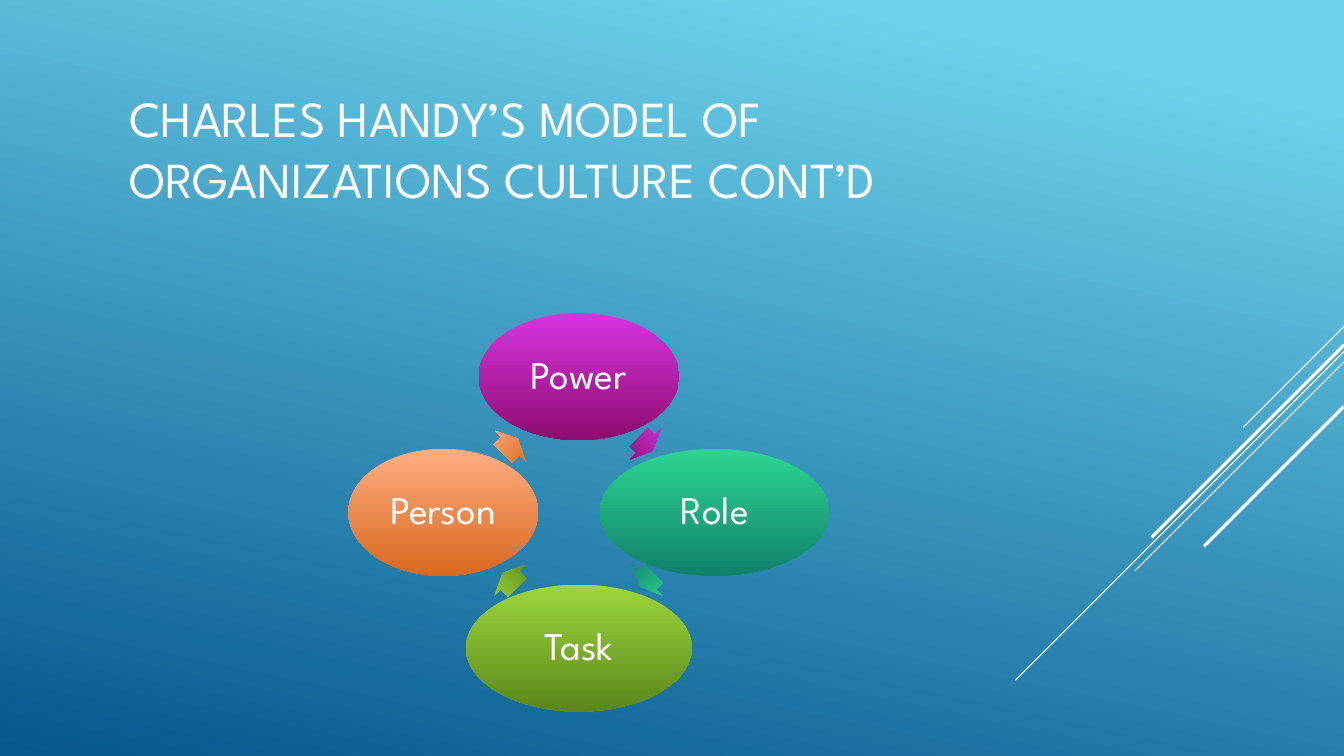
from dataclasses import dataclass
from math import cos, radians, sin

from lxml.etree import SubElement
from pptx import Presentation
from pptx.dml.color import RGBColor
from pptx.dml.fill import FillFormat
from pptx.enum.shapes import MSO_CONNECTOR, MSO_SHAPE
from pptx.enum.text import MSO_ANCHOR as Anchor, MSO_AUTO_SIZE as AutoSize, PP_ALIGN as Align
from pptx.oxml.ns import qn
from pptx.slide import Slide
from pptx.text.text import TextFrame
from pptx.util import Cm, Pt


@dataclass(frozen=True)
class Theme:
    font: str = "League Spartan"
    white: str = "FFFFFF"
    sky: str = "6ED2EB"
    ocean: str = "06588E"
    title_size: float = 36
    label_size: float = 28


@dataclass(frozen=True)
class Ray:
    """A diagonal that falls to the left from the right edge (cm)."""
    top: float
    run: float
    weight: float


@dataclass(frozen=True)
class Culture:
    """An ellipse on the ring and the arrow that follows it (cm)."""
    name: str
    width: float
    light: str
    dark: str
    arrow_x: float
    arrow_y: float
    arrow_width: float


THEME = Theme()
PAGE_WIDTH, PAGE_HEIGHT = 33.87, 19.05
RING_X, RING_Y, RING_RADIUS = 14.59, 12.91, 3.42
ELLIPSE_HEIGHT, ARROW_HEIGHT = 3.2, 1.09

RAYS = [
    Ray(8.23, 2.54, 0.75),
    Ray(8.86, 8.28, 0.75),
    Ray(9.12, 5.27, 0.75),
    Ray(8.69, 4.85, 2.25),
    Ray(10.24, 3.53, 2.25),
]
CULTURES = [
    Culture("Power", 5.05, "D835DF", "8D0C6F", 16.27, 11.19, 0.48),
    Culture("Role", 5.79, "2ED592", "11806A", 16.31, 14.62, 0.46),
    Culture("Task", 5.69, "9DD63D", "5B871B", 12.85, 14.62, 0.51),
    Culture("Person", 4.78, "FFAE82", "D7681F", 12.86, 11.24, 0.53),
]


def color(code: str) -> RGBColor:
    return RGBColor.from_string(code)


def shade(fill: FillFormat, light: str, dark: str, start: float = 0, angle: float = 90) -> None:
    """Fill with two colours; the angle runs clockwise."""
    fill.gradient()
    fill.gradient_angle = 360 - angle
    for stop, code, position in zip(fill.gradient_stops, (light, dark), (start, 1)):
        stop.color.rgb = color(code)
        stop.position = position


def write(frame: TextFrame, words: str, size: float, align: Align) -> None:
    frame.text = words
    frame.word_wrap = True
    frame.auto_size = AutoSize.NONE
    frame.vertical_anchor = Anchor.MIDDLE
    para = frame.paragraphs[0]
    para.alignment = align
    for span in para.runs:
        span.font.name = THEME.font
        span.font.size = Pt(size)
        span.font.color.rgb = color(THEME.white)


def draw_ray(page: Slide, ray: Ray) -> None:
    line = page.shapes.add_connector(
        MSO_CONNECTOR.STRAIGHT, Cm(PAGE_WIDTH), Cm(ray.top),
        Cm(PAGE_WIDTH - ray.run), Cm(ray.top + ray.run))
    line.line.color.rgb = color(THEME.white)
    line.line.width = Pt(ray.weight)
    SubElement(line._element.spPr, qn("a:effectLst"))


def add_body(page: Slide, kind: MSO_SHAPE, x: float, y: float,
             width: float, height: float, culture: Culture):
    """Add a shaded shape centred on x, y."""
    body = page.shapes.add_shape(
        kind, Cm(x - width / 2), Cm(y - height / 2), Cm(width), Cm(height))
    body.shadow.inherit = False
    body.line.fill.background()
    shade(body.fill, culture.light, culture.dark)
    return body


def draw_culture(page: Slide, culture: Culture, turn: float) -> None:
    x = RING_X + RING_RADIUS * sin(radians(turn))
    y = RING_Y - RING_RADIUS * cos(radians(turn))
    ellipse = add_body(page, MSO_SHAPE.OVAL, x, y, culture.width, ELLIPSE_HEIGHT, culture)
    frame = ellipse.text_frame
    frame.margin_left = frame.margin_right = frame.margin_top = frame.margin_bottom = Cm(0.1)
    write(frame, culture.name, THEME.label_size, Align.CENTER)
    frame.paragraphs[0].line_spacing = 0.9

    arrow = add_body(page, MSO_SHAPE.RIGHT_ARROW, culture.arrow_x, culture.arrow_y,
                     culture.arrow_width, ARROW_HEIGHT, culture)
    arrow.adjustments[0] = 0.6
    arrow.adjustments[1] = 0.5
    arrow.rotation = turn + 45


def main() -> None:
    deck = Presentation()
    deck.slide_width, deck.slide_height = Cm(PAGE_WIDTH), Cm(PAGE_HEIGHT)
    page = deck.slides.add_slide(deck.slide_layouts[5])

    # Background and diagonal rays
    shade(page.background.fill, THEME.sky, THEME.ocean, start=0.1, angle=102)
    for ray in RAYS:
        draw_ray(page, ray)

    # Title
    title = page.shapes.title
    title.left, title.top, title.width, title.height = Cm(3), Cm(1.63), Cm(23.7), Cm(4.19)
    write(title.text_frame, "CHARLES HANDY’S MODEL OF ORGANIZATIONS CULTURE CONT’D",
          THEME.title_size, Align.LEFT)

    # Cycle of cultures, clockwise from the top
    for index, culture in enumerate(CULTURES):
        draw_culture(page, culture, index * 360 / len(CULTURES))

    deck.save("out.pptx")


if __name__ == "__main__":
    main()
